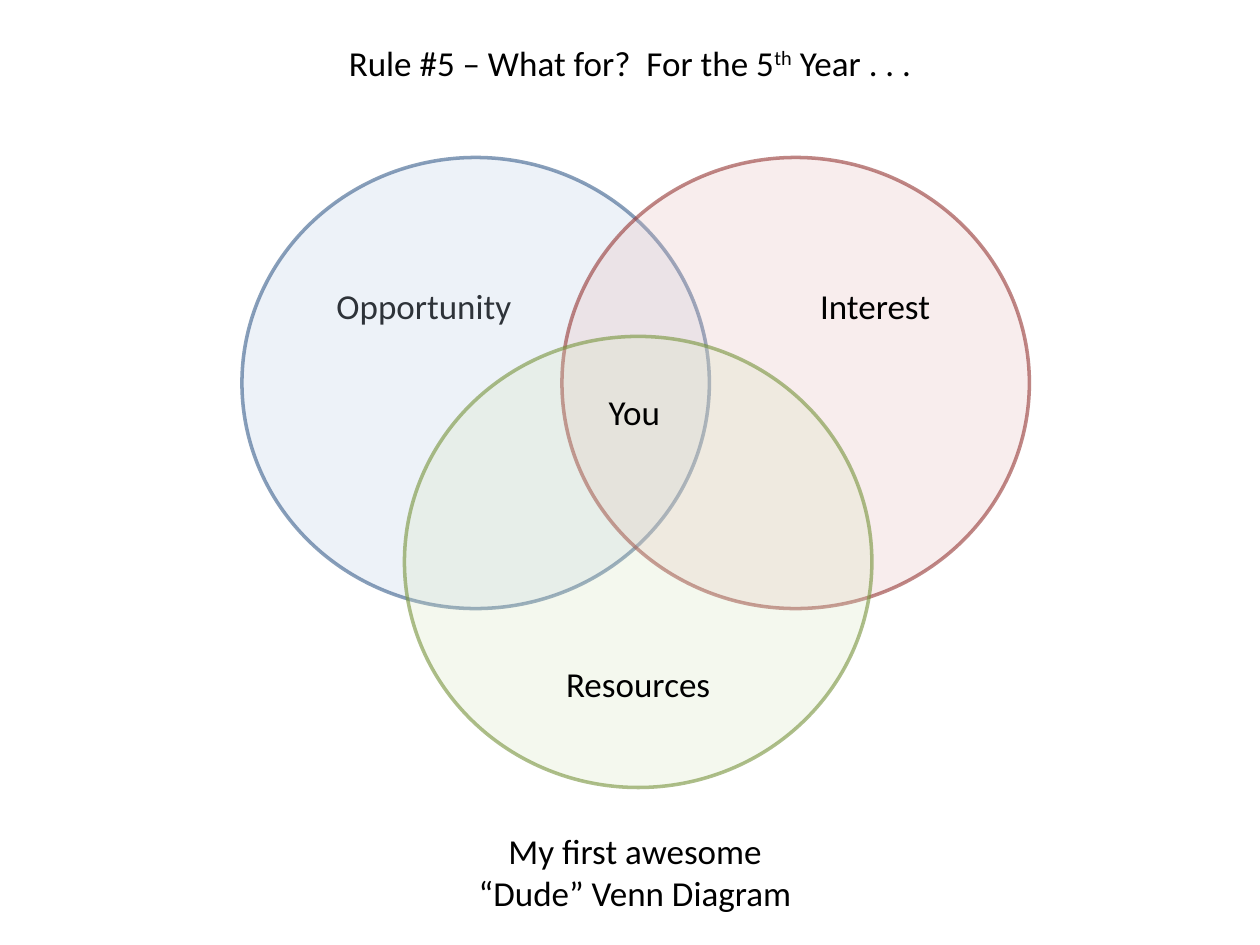
"""Build a slide with a three-circle Venn diagram."""
from lxml import etree
from pptx import Presentation
from pptx.dml.color import RGBColor
from pptx.enum import shapes, text
from pptx.oxml.ns import qn
from pptx.util import Inches, Pt


def color(hex_value):
    return RGBColor.from_string(hex_value)


def style_text(frame):
    frame.word_wrap = True
    frame.auto_size = text.MSO_AUTO_SIZE.NONE
    frame.vertical_anchor = text.MSO_ANCHOR.MIDDLE
    paragraph = frame.paragraphs[0]
    paragraph.alignment = text.PP_ALIGN.CENTER
    for run in paragraph.runs:
        run.font.name = "Calibri"
        run.font.size = Pt(20)
        run.font.color.rgb = color("000000")


prs = Presentation()
prs.slide_width, prs.slide_height = Inches(10), Inches(7.5)
slide = prs.slides.add_slide(prs.slide_layouts[5])

heading = slide.shapes.title
heading.left, heading.top = Inches(0.75), Inches(0.08)
heading.width, heading.height = Inches(8.5), Inches(0.83)
heading_line = heading.text_frame.paragraphs[0]
for part in ("Rule #5 – What for?  For the 5", "th", " Year . . ."):
    heading_line.add_run().text = part
style_text(heading.text_frame)
heading_line.runs[1]._r.get_or_add_rPr().set("baseline", "30000")

labels = [
    ("Opportunity", 2.31, 1.83, 2.11, 1.19),
    ("Interest", 5.89, 1.83, 2.11, 1.19),
    ("Resources", 4.01, 4.83, 2.11, 1.19),
    ("You", 3.98, 2.67, 2.11, 1.19),
    ("My first awesome “Dude” Venn Diagram", 3.5, 6.33, 3.08, 1.17),
]
for wording, *box in labels:
    label = slide.shapes.add_textbox(*map(Inches, box))
    label.text_frame.text = wording
    style_text(label.text_frame)

    if wording == "Opportunity":
        for left, top, fill, outline in [
            (1.92, 1.25, "B9CDE5", "3A5F8C"),
            (4.46, 1.25, "E6B9B8", "953735"),
            (3.21, 2.67, "D7E4BD", "77933C"),
        ]:
            circle = slide.shapes.add_shape(
                shapes.MSO_SHAPE.OVAL, Inches(left), Inches(top), Inches(3.71), Inches(3.58))
            circle.shadow.inherit = False
            circle.fill.solid()
            circle.fill.fore_color.rgb = color(fill)
            circle.line.color.rgb = color(outline)
            circle.line.width = Pt(2)
            tints = list(circle._element.spPr.iter(qn("a:srgbClr")))
            for tint, opacity in zip(tints, (25, 60)):
                etree.SubElement(tint, qn("a:alpha")).set("val", str(opacity * 1000))

prs.save("out.pptx")
